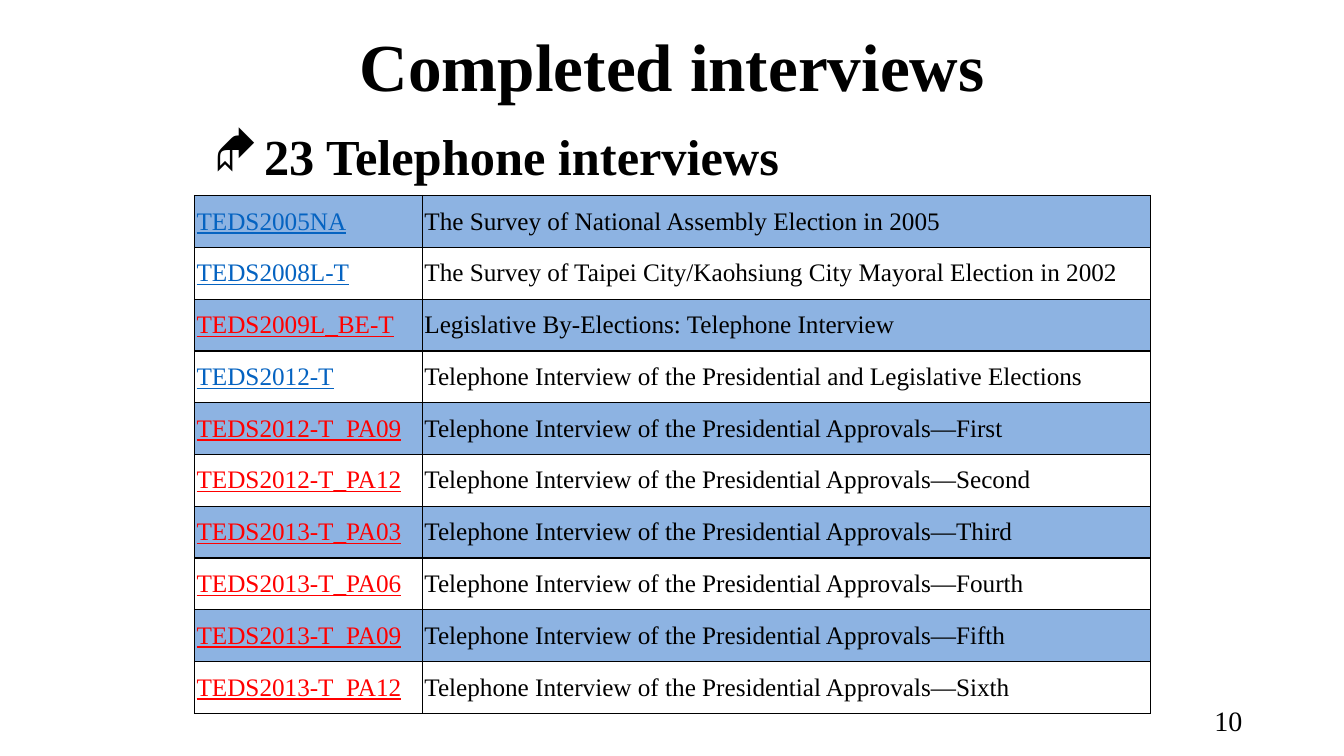
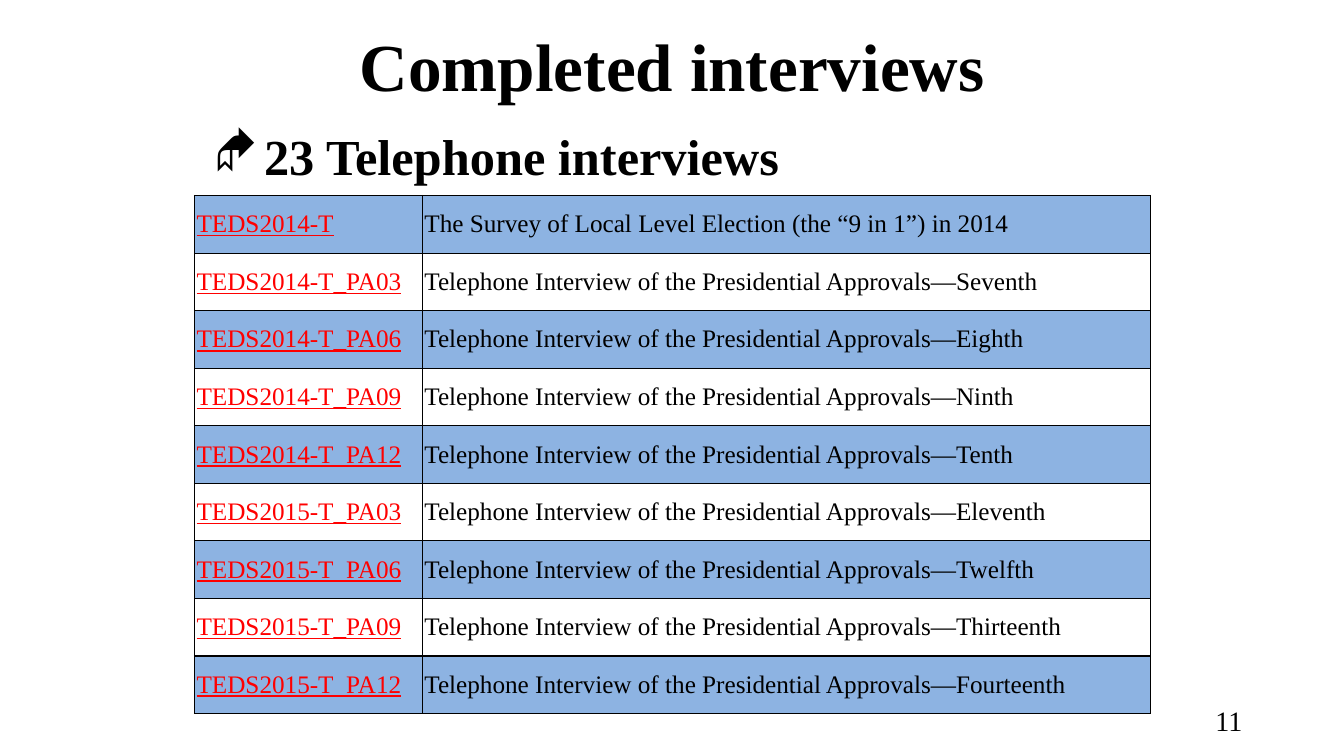
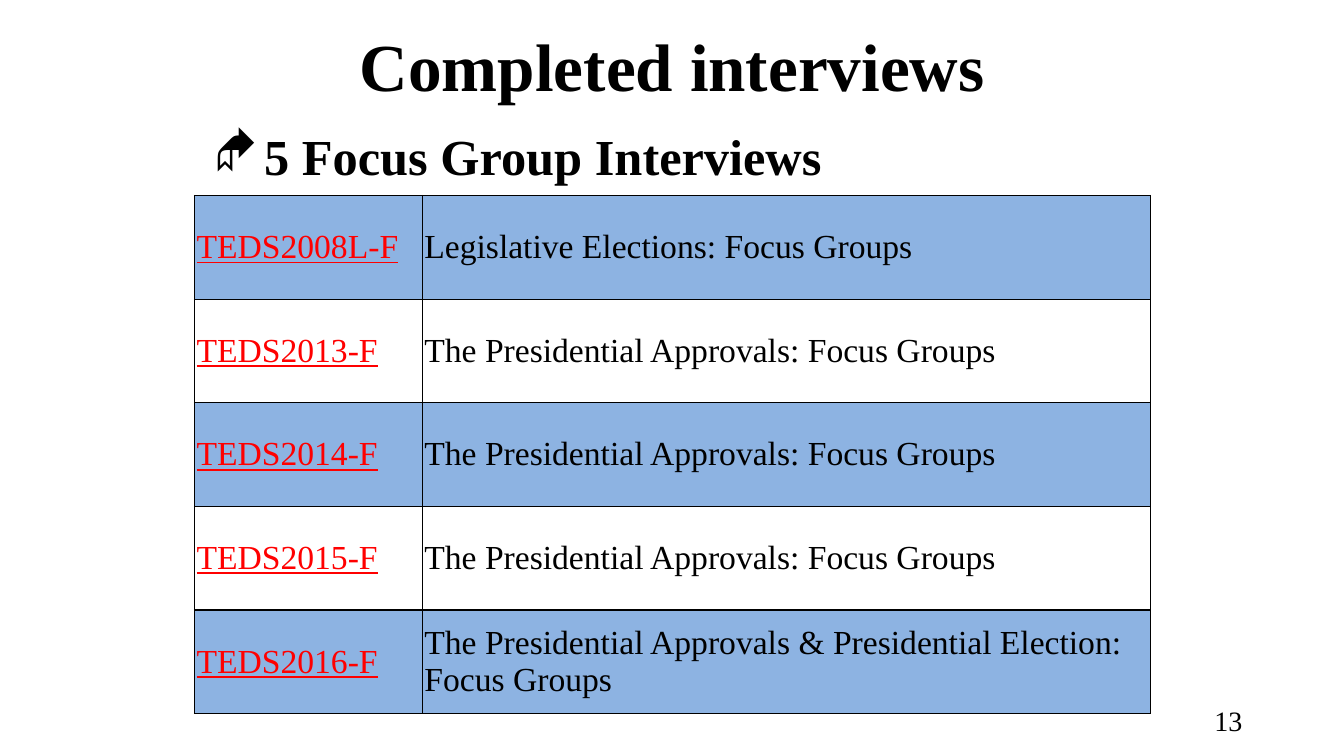
from dataclasses import dataclass

from lxml.etree import SubElement
from pptx import Presentation
from pptx.dml.color import RGBColor as RGB
from pptx.enum.text import MSO_ANCHOR as ANCHOR, PP_ALIGN as ALIGN
from pptx.oxml.ns import qn
from pptx.util import Inches, Pt


@dataclass(frozen=True)
class Theme:
    font: str = "Times New Roman"
    paper: RGB = RGB(255, 255, 255)
    ink: RGB = RGB(0, 0, 0)
    link: RGB = RGB(0x05, 0x63, 0xC1)
    new_link: RGB = RGB(255, 0, 0)
    band: RGB = RGB(0x8D, 0xB3, 0xE2)
    title: int = 48
    heading: int = 36
    number: int = 20
    row: int = 18
    large_row: int = 24


T = Theme()
TITLE = "Completed interviews"
TABLE_BOX = 1.93, 1.94, 9.48, 5.14
CODE_WIDTH = 2.26
CELL_INSET = 0.02
BLUE_CODES = {"TEDS2005NA", "TEDS2008L-T", "TEDS2012-T"}
APPROVALS = "Telephone Interview of the Presidential Approvals—"
FOCUS = "The Presidential Approvals: Focus Groups"

SLIDES = [
    ("10", "23 Telephone interviews", T.row, [
        ("TEDS2005NA", "The Survey of National Assembly Election in 2005"),
        ("TEDS2008L-T", "The Survey of Taipei City/Kaohsiung City Mayoral Election in 2002"),
        ("TEDS2009L_BE-T", "Legislative By-Elections: Telephone Interview"),
        ("TEDS2012-T", "Telephone Interview of the Presidential and Legislative Elections"),
        ("TEDS2012-T_PA09", APPROVALS + "First"),
        ("TEDS2012-T_PA12", APPROVALS + "Second"),
        ("TEDS2013-T_PA03", APPROVALS + "Third"),
        ("TEDS2013-T_PA06", APPROVALS + "Fourth"),
        ("TEDS2013-T_PA09", APPROVALS + "Fifth"),
        ("TEDS2013-T_PA12", APPROVALS + "Sixth"),
    ]),
    ("11", "23 Telephone interviews", T.row, [
        ("TEDS2014-T", "The Survey of Local Level Election (the “9 in 1”) in 2014"),
        ("TEDS2014-T_PA03", APPROVALS + "Seventh"),
        ("TEDS2014-T_PA06", APPROVALS + "Eighth"),
        ("TEDS2014-T_PA09", APPROVALS + "Ninth"),
        ("TEDS2014-T_PA12", APPROVALS + "Tenth"),
        ("TEDS2015-T_PA03", APPROVALS + "Eleventh"),
        ("TEDS2015-T_PA06", APPROVALS + "Twelfth"),
        ("TEDS2015-T_PA09", APPROVALS + "Thirteenth"),
        ("TEDS2015-T_PA12", APPROVALS + "Fourteenth"),
    ]),
    ("13", "5 Focus Group Interviews", T.large_row, [
        ("TEDS2008L-F", "Legislative Elections: Focus Groups"),
        ("TEDS2013-F", FOCUS),
        ("TEDS2014-F", FOCUS),
        ("TEDS2015-F", FOCUS),
        ("TEDS2016-F", "The Presidential Approvals & Presidential Election: Focus Groups"),
    ]),
]


def write(tf, text, size, color=T.ink, bold=False, underline=False, align=ALIGN.LEFT):
    tf.word_wrap = True
    p = tf.paragraphs[0]
    p.text = text
    p.alignment = align
    f = p.runs[0].font
    f.name, f.size, f.bold, f.underline = T.font, Pt(size), bold, underline
    f.color.rgb = color
    return p


def add_title(s, text):
    sp = s.shapes.title
    sp.left, sp.top, sp.width, sp.height = map(Inches, (2.17, 0.13, 9, 1.02))
    sp.text_frame.vertical_anchor = ANCHOR.MIDDLE
    write(sp.text_frame, text, T.title, bold=True, align=ALIGN.CENTER)


def add_text(s, box, text, size, anchor=ANCHOR.TOP, **style):
    sp = s.shapes.add_textbox(*map(Inches, box))
    sp.text_frame.vertical_anchor = anchor
    return write(sp.text_frame, text, size, **style)


def add_heading(s, text):
    p = add_text(s, (2.02, 1.31, 9.29, 0.63), text, T.heading, bold=True, align=ALIGN.JUSTIFY)
    p.line_spacing = 0.8
    pPr = p._p.get_or_add_pPr()
    pPr.set("marL", str(Inches(0.5)))
    pPr.set("indent", str(-Inches(0.5)))
    color = SubElement(pPr, qn("a:buClr"))
    SubElement(color, qn("a:srgbClr"), val=str(T.ink))
    SubElement(pPr, qn("a:buFont"), typeface="Wingdings")
    SubElement(pPr, qn("a:buChar"), char="◆")


def add_borders(cell):
    tcPr = cell._tc.get_or_add_tcPr()
    for i, side in enumerate(("lnL", "lnR", "lnT", "lnB")):
        ln = tcPr.makeelement(qn("a:" + side), {"w": str(Pt(1))})
        fill = SubElement(ln, qn("a:solidFill"))
        SubElement(fill, qn("a:srgbClr"), val=str(T.ink))
        tcPr.insert(i, ln)


def fill_cell(cell, text, size, fill, **style):
    cell.margin_left = cell.margin_right = Inches(CELL_INSET)
    cell.margin_top = cell.margin_bottom = Inches(CELL_INSET)
    cell.vertical_anchor = ANCHOR.MIDDLE
    cell.fill.solid()
    cell.fill.fore_color.rgb = fill
    add_borders(cell)
    write(cell.text_frame, text, size, **style)


def add_survey_table(s, surveys, size):
    tbl = s.shapes.add_table(len(surveys), 2, *map(Inches, TABLE_BOX)).table
    tbl.first_row = tbl.horz_banding = False
    tbl.columns[0].width = Inches(CODE_WIDTH)
    tbl.columns[1].width = Inches(TABLE_BOX[2] - CODE_WIDTH)
    for i, (code, name) in enumerate(surveys):
        fill = T.paper if i % 2 else T.band
        color = T.link if code in BLUE_CODES else T.new_link
        fill_cell(tbl.cell(i, 0), code, size, fill, color=color, underline=True)
        fill_cell(tbl.cell(i, 1), name, size, fill)


def main():
    prs = Presentation()
    prs.slide_width, prs.slide_height = Inches(13.33), Inches(7.5)
    for number, heading, size, surveys in SLIDES:
        s = prs.slides.add_slide(prs.slide_layouts[5])
        add_text(s, (9.42, 6.95, 3, 0.4), number, T.number, ANCHOR.MIDDLE, align=ALIGN.RIGHT)
        add_title(s, TITLE)
        add_heading(s, heading)
        add_survey_table(s, surveys, size)
    prs.save("out.pptx")


if __name__ == "__main__":
    main()
